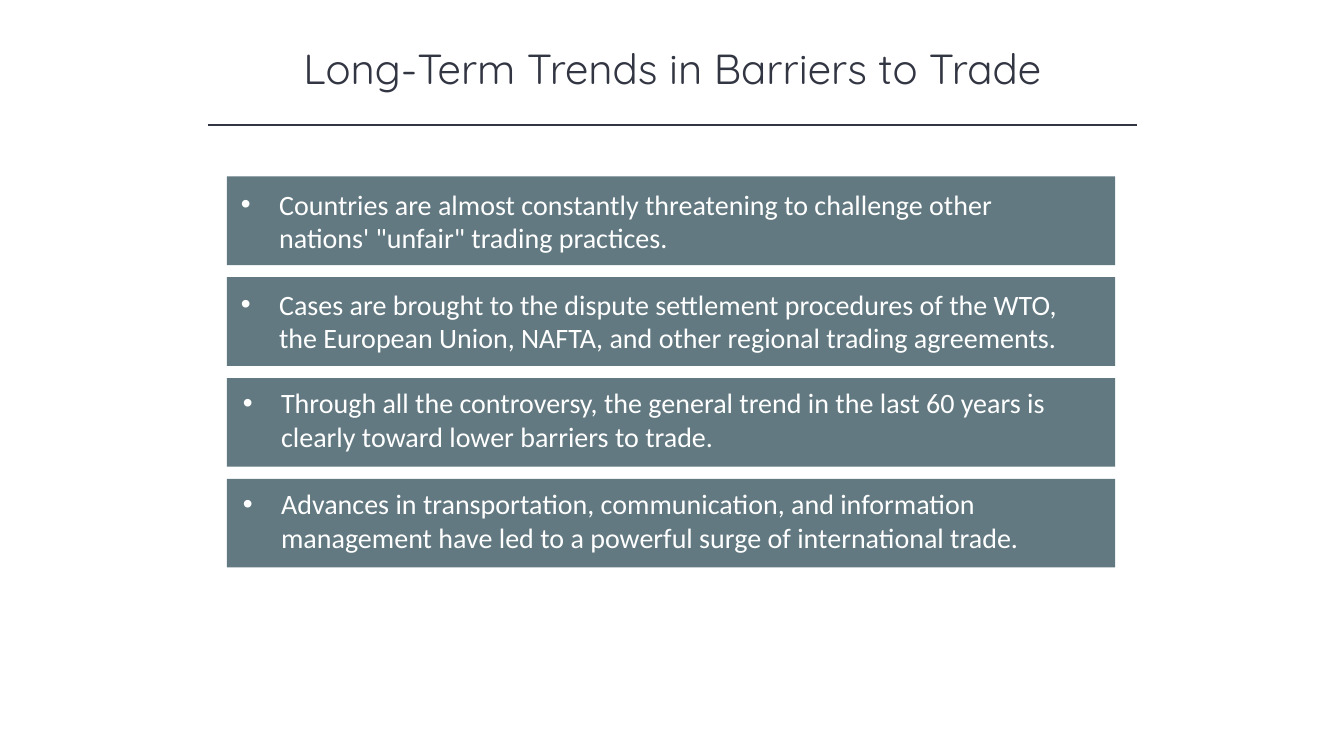
from lxml.etree import SubElement
from pptx import Presentation
from pptx.dml.color import RGBColor
from pptx.enum.shapes import MSO_CONNECTOR, MSO_SHAPE
from pptx.enum.text import MSO_ANCHOR, MSO_AUTO_SIZE, PP_ALIGN
from pptx.oxml.ns import qn
from pptx.util import Inches, Pt

INK = RGBColor(0x32, 0x35, 0x42)
SLATE = RGBColor(0x62, 0x79, 0x81)
WHITE = RGBColor(0xFF, 0xFF, 0xFF)

HEAD = {"name": "Quicksand", "size": Pt(30), "bold": False}
BODY = {"name": "Calibri", "size": Pt(20)}
FRAME = {
    "word_wrap": True,
    "auto_size": MSO_AUTO_SIZE.NONE,
    "vertical_anchor": MSO_ANCHOR.TOP,
    "margin_left": Inches(0.1),
    "margin_right": Inches(0.1),
    "margin_top": Inches(0.05),
    "margin_bottom": Inches(0.05),
}

TOP = 1.75
PITCH = 1
TRENDS = [
    (2.29, 0.06, "Countries are almost constantly threatening to challenge other "
     "nations' \"unfair\" trading practices."),
    (2.29, 0.05, "Cases are brought to the dispute settlement procedures of the WTO, "
     "the European Union, NAFTA, and other regional trading agreements."),
    (2.31, 0.03, "Through all the controversy, the general trend in the last 60 years "
     "is clearly toward lower barriers to trade."),
    (2.31, 0.03, "Advances in transportation, communication, and information "
     "management have led to a powerful surge of international trade."),
]


def apply(target, values):
    for key, value in values.items():
        setattr(target, key, value)


def write(shape, text, font, color, align):
    frame = shape.text_frame
    apply(frame, FRAME)
    frame.text = text
    para = frame.paragraphs[0]
    apply(para, {"alignment": align, "line_spacing": 1.0, "space_before": Pt(0)})
    run = para.runs[0]
    apply(run.font, font)
    run.font.color.rgb = color
    return para


def add_title(slide, text):
    title = slide.shapes.title
    apply(title, {"left": Inches(1.67), "top": Inches(0.37),
                  "width": Inches(10), "height": Inches(0.61)})
    write(title, text, HEAD, INK, PP_ALIGN.CENTER)


def add_rule(slide, left, right, top):
    rule = slide.shapes.add_connector(
        MSO_CONNECTOR.STRAIGHT, Inches(left), Inches(top), Inches(right), Inches(top))
    rule.line.color.rgb = INK
    rule.line.width = Pt(1)
    SubElement(rule.element.spPr, qn("a:effectLst"))


def add_block(shapes, left, top, width, height):
    block = shapes.add_shape(
        MSO_SHAPE.RECTANGLE, Inches(left), Inches(top), Inches(width), Inches(height))
    block.shadow.inherit = False
    block.fill.solid()
    block.fill.fore_color.rgb = SLATE
    block.line.fill.background()
    return block


def add_bullet(para):
    props = para._p.get_or_add_pPr()
    apply_to = {"marL": Inches(0.38), "indent": -Inches(0.38)}
    for key, value in apply_to.items():
        props.set(key, str(value))
    SubElement(props, qn("a:buFont")).set("typeface", "Arial")
    SubElement(props, qn("a:buChar")).set("char", "•")


def add_trend(slide, top, left, drop, text):
    group = slide.shapes.add_group_shape()
    add_block(group.shapes, 2.25, top, 8.81, 0.88)
    label = add_block(group.shapes, left, top + drop, 8.54, 0.77)
    add_bullet(write(label, text, BODY, WHITE, PP_ALIGN.LEFT))


def main():
    deck = Presentation()
    deck.slide_width = Inches(13.33)
    deck.slide_height = Inches(7.5)
    slide = deck.slides.add_slide(deck.slide_layouts[5])
    add_title(slide, "Long-Term Trends in Barriers to Trade")
    add_rule(slide, 2.06, 11.28, 1.24)
    for row, trend in enumerate(TRENDS):
        add_trend(slide, TOP + row * PITCH, *trend)
    deck.save("out.pptx")


if __name__ == "__main__":
    main()
